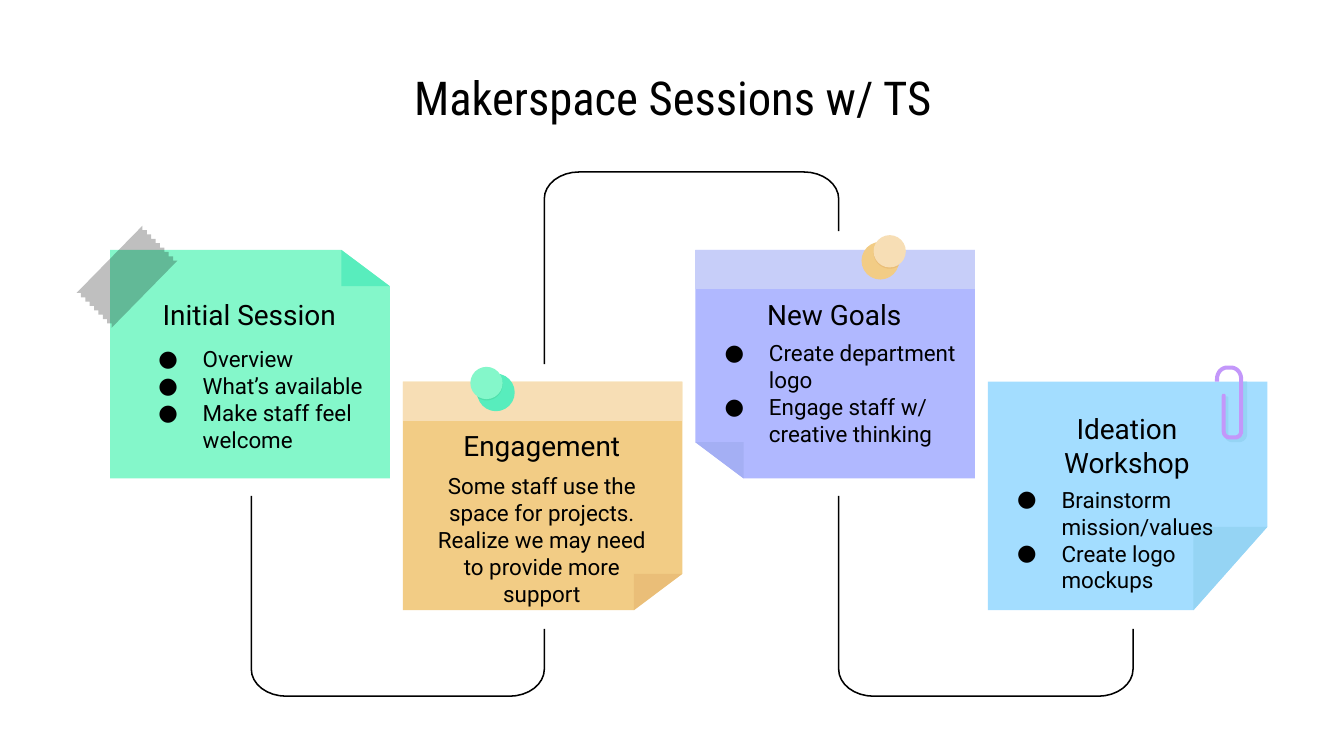
import math
import pptx
import pptx.util
import pptx.dml.color
import pptx.enum.shapes
import pptx.enum.text
import pptx.oxml.ns
import lxml.etree

Inches, Pt = pptx.util.Inches, pptx.util.Pt
ALIGN = pptx.enum.text.PP_ALIGN

# Content: notes from left to right, "fold" is the cut corner
# (0 top left, 1 top right, 2 bottom right, 3 bottom left) and its size
TITLE = "Makerspace Sessions w/ TS"
NOTES = [
    {"head": "Initial Session",
     "items": ["Overview", "What’s available", "Make staff feel welcome"],
     "paper": "mint", "shade": "green", "fold": (1, 0.36, 0.27),
     "body": (0.09, 0.62, 1.91, 0.98)},
    {"head": "Engagement",
     "text": "Some staff use the space for projects. "
             "Realize we may need to provide more support",
     "paper": "gold", "shade": "amber", "fold": (2, 0.36, 0.27),
     "band": "cream", "body": (0.08, 0.85, 1.91, 0.65)},
    {"head": "New Goals",
     "items": ["Create department logo", "Engage staff w/ creative thinking"],
     "paper": "lilac", "shade": "violet", "fold": (3, 0.36, 0.27),
     "band": "haze", "body": (-0.05, 0.74, 2.19, 0.65)},
    {"head": "Ideation Workshop",
     "items": ["Brainstorm mission/values", "Create logo mockups"],
     "paper": "sky", "shade": "blue", "fold": (2, 0.55, 0.62),
     "body": (-0.05, 0.85, 2.19, 0.65)},
]
# Pins: base centre, head centre, then base, shade and head colours
PINS = [((3.69, 2.92), (3.62, 2.85), "green", "jade", "mint"),
        ((6.55, 1.94), (6.62, 1.87), "gold", "amber", "cream")]
# Wires: first column, start y, turn y, end y
WIRES = [(0, 3.69, 5.18, 4.68), (2, 3.69, 5.18, 4.68), (1, 2.71, 1.28, 1.72)]
# Clip outlines: x, y and, at a round corner, its two radii
CLIP = {
    "blue": [(9.25, 2.84), (9.25, 3.25, 0.03, 0.02), (9.14, 3.25, 0.03, 0.02),
             (9.14, 2.95, 0.01, 0.01), (9.11, 2.95, 0.01, 0.01),
             (9.11, 3.29, 0.06, 0.06), (9.28, 3.29, 0.06, 0.06), (9.28, 2.84)],
    "purple": [(9.04, 2.84), (9.04, 2.72, 0.09, 0.1), (9.25, 2.72, 0.09, 0.1),
               (9.25, 3.27, 0.06, 0.06), (9.09, 3.27, 0.06, 0.06),
               (9.09, 2.93, 0.01, 0.02), (9.12, 2.93, 0.01, 0.02),
               (9.12, 3.24, 0.03, 0.03), (9.22, 3.24, 0.03, 0.03),
               (9.22, 2.75, 0.06, 0.07), (9.07, 2.75, 0.06, 0.07),
               (9.07, 2.84)],
}
INK = {"black": "000000", "mint": "84F7CA", "green": "58EDBD", "jade": "4FE0AB",
       "gold": "F2CC85", "amber": "EABE78", "cream": "F7DEB5",
       "lilac": "B0B8FF", "violet": "A4AFF4", "haze": "C7CEF9",
       "sky": "A3DDFF", "blue": "95D4F4", "purple": "C397FA"}
FRAME = {"word_wrap": True,
         "vertical_anchor": pptx.enum.text.MSO_ANCHOR.MIDDLE,
         "margin_left": Inches(0.1), "margin_right": Inches(0.1),
         "margin_top": Inches(0.1), "margin_bottom": Inches(0.1)}
FONT = {"title": {"name": "Roboto Condensed", "size": Pt(25)},
        "head": {"name": "Roboto", "size": Pt(15)},
        "body": {"name": "Roboto", "size": Pt(12)}}
WIDE, HIGH, BAND = 2.08, 1.7, 0.29
LEFT, LAST, ROWS = 0.82, 7.35, (1.86, 2.84)
STEP = (LAST - LEFT) / (len(NOTES) - 1)

deck = pptx.Presentation()
deck.slide_width = Inches(10)
deck.slide_height = deck.slide_width * 9 // 16
slide = deck.slides.add_slide(deck.slide_layouts[6])
shapes = slide.shapes


def tint(name):
    return pptx.dml.color.RGBColor.from_string(INK[name])


def sub(node, tag, **vals):
    return lxml.etree.SubElement(node, pptx.oxml.ns.qn(tag), **vals)


def paint(shape, color):
    shape.shadow.inherit = False
    shape.fill.solid()
    shape.fill.fore_color.rgb = tint(color)
    shape.line.fill.background()
    return shape


def trace(pts, close=True):
    pts = [(Inches(x), Inches(y)) for x, y in pts]
    pen = shapes.build_freeform(*pts[0], scale=1.0)
    pen.add_line_segments(pts[1:], close=close)
    return pen.convert_to_shape()


def bend(pts):
    """Turn each corner that has radii into a quarter ellipse."""
    out = []
    for i, (x, y, *radii) in enumerate(pts):
        if not radii:
            out.append((x, y))
            continue
        ends = []
        for px, py, *_ in (pts[i - 1], pts[i + 1]):
            dx, dy = px - x, py - y
            ends.append((math.copysign(radii[0], dx), 0) if abs(dx) > abs(dy)
                        else (0, math.copysign(radii[1], dy)))
        (ax, ay), (bx, by) = ends
        for k in range(9):
            s, c = math.sin(k * math.pi / 16), math.cos(k * math.pi / 16)
            out.append((x + ax * (1 - s) + bx * (1 - c),
                        y + ay * (1 - s) + by * (1 - c)))
    return out


def disc(mid, r, color):
    box = (mid[0] - r, mid[1] - r, 2 * r, 2 * r)
    oval = pptx.enum.shapes.MSO_SHAPE.OVAL
    paint(shapes.add_shape(oval, *map(Inches, box)), color)


def write(box, lines, kind, dots=False):
    frame = shapes.add_textbox(*map(Inches, box)).text_frame
    for key, val in FRAME.items():
        setattr(frame, key, val)
    for i, line in enumerate(lines):
        para = frame.add_paragraph() if i else frame.paragraphs[0]
        para.alignment = ALIGN.LEFT if dots else ALIGN.CENTER
        run = para.add_run()
        run.text = line
        for key, val in FONT[kind].items():
            setattr(run.font, key, val)
        run.font.color.rgb = tint("black")
        if dots:
            props = para._p.get_or_add_pPr()
            props.set("marL", str(Inches(0.5)))
            props.set("indent", str(Inches(-0.33)))
            sub(sub(props, "a:buClr"), "a:srgbClr", val=INK["black"])
            sub(props, "a:buFont", typeface=FONT[kind]["name"])
            sub(props, "a:buChar", char="●")


# Title and wires
write((0.78, 0.5, 8.45, 0.44), [TITLE], "title")
for col, top, turn, end in WIRES:
    a, b = (1.87 + 2.19 * n - 0.01 * (n > 0) for n in (col, col + 1))
    wire = trace(bend([(a, top), (a, turn, 0.26, 0.2),
                       (b, turn, 0.26, 0.2), (b, end)]), close=False)
    wire.shadow.inherit = False
    wire.fill.background()
    wire.line.color.rgb = tint("black")
    wire.line.width = Pt(0.81)

# Notes: paper, folded corner, band
spots = [(LEFT + STEP * i, ROWS[i % 2]) for i in range(len(NOTES))]
for (x, y), note in zip(spots, NOTES):
    edge = [(x, y), (x + WIDE, y), (x + WIDE, y + HIGH), (x, y + HIGH)]
    n, fw, fh = note["fold"]
    cx, cy = edge[n]
    ix = cx + fw if cx == x else cx - fw
    iy = cy + fh if cy == y else cy - fh
    cut = [(ix, cy), (cx, iy)]
    edge[n:n + 1] = cut if n % 2 else cut[::-1]
    paint(trace(edge), note["paper"])
    paint(trace([cut[0], (ix, iy), cut[1]]), note["shade"])
    if "band" in note:
        paint(trace([(x, y), (x + WIDE, y), (x + WIDE, y + BAND),
                     (x, y + BAND)]), note["band"])

# Tape with two jagged ends
tape = []
for x, y, way in ((0.57, 2.18, 1), (1.32, 1.94, -1)):
    tooth = way * 0.26 / 8
    tape.append((x, y))
    for k in range(8):
        tape += [(x + (k + 1) * tooth, y + k * tooth),
                 (x + (k + 1) * tooth, y + (k + 1) * tooth)]
strip = paint(trace(tape), "black")
for node in strip._element.spPr.iter(pptx.oxml.ns.qn("a:srgbClr")):
    sub(node, "a:alpha", val="25000")

# Pins: the head's shade is kept inside the base
for base, head, low, shade, high in PINS:
    disc(base, 0.14, low)
    rim = []
    for k in range(48):
        turn = k * math.pi / 24
        dx = head[0] + 0.12 * math.cos(turn) - base[0]
        dy = head[1] + 0.01 + 0.12 * math.sin(turn) - base[1]
        fit = min(1, 0.14 / math.hypot(dx, dy))
        rim.append((base[0] + dx * fit, base[1] + dy * fit))
    paint(trace(rim), shade)
    disc(head, 0.12, high)

# Paper clip
for color, pts in CLIP.items():
    paint(trace(bend(pts)), color)

# Note wording
for (x, y), note in zip(spots, NOTES):
    write((x + 0.08, y + 0.33, 1.91, 0.29), [note["head"]], "head")
    dx, dy, w, h = note["body"]
    write((x + dx, y + dy, w, h), note.get("items") or [note["text"]],
          "body", dots="items" in note)

deck.save("out.pptx")
